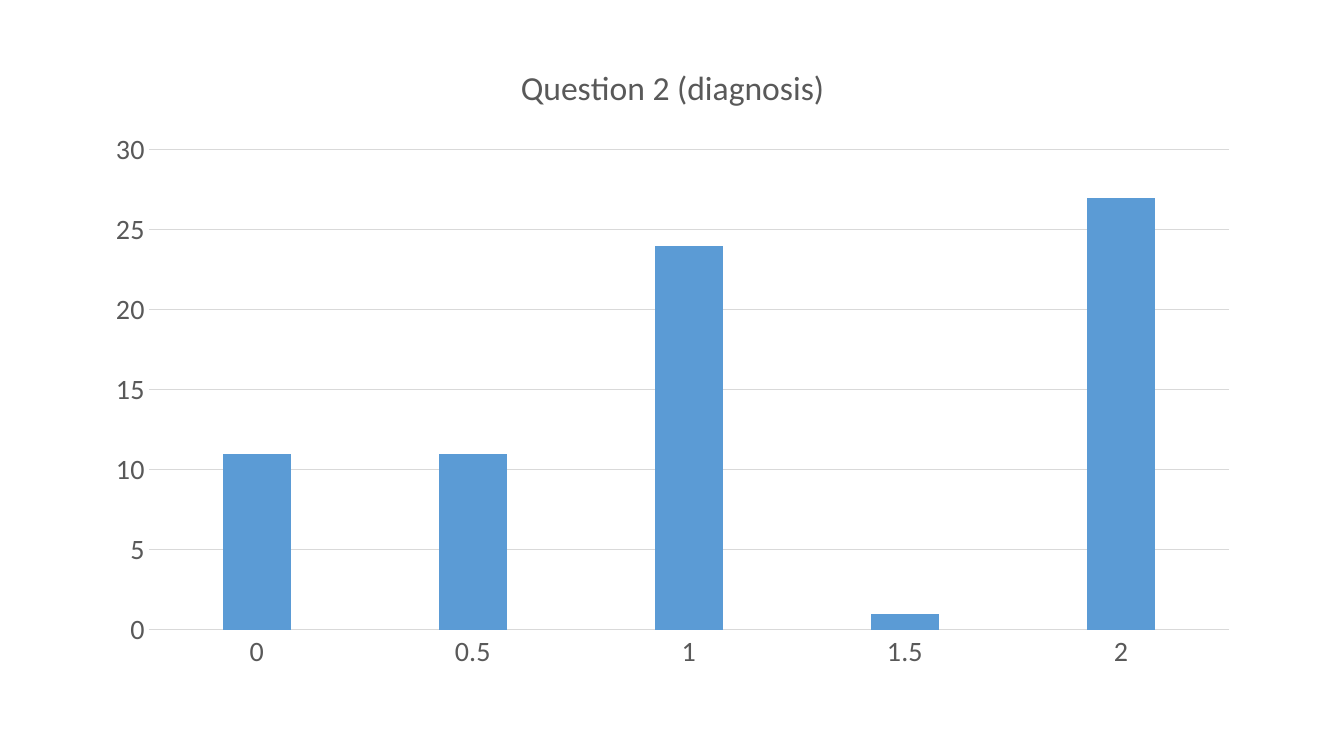
"""Build a slide with a column chart of the scores for question 2."""
import dataclasses

import pptx
import pptx.chart.data
import pptx.dml.color
import pptx.enum.chart
import pptx.util

QUESTION = "Question 2 (diagnosis)"
ANSWERS_BY_SCORE = {"0": 11, "0.5": 11, "1": 24, "1.5": 1, "2": 27}
SLIDE_SIZE = (13.33, 7.5)
CHART_BOX = (0.92, 0.4, 11.5, 6.36)


@dataclasses.dataclass(frozen=True)
class Theme:
    font: str = "Calibri"
    text: str = "595959"
    rule: str = "D9D9D9"
    column: str = "5B9BD5"
    title_size: int = 24
    label_size: int = 20
    rule_width: float = 0.75


THEME = Theme()


def color(value):
    return pptx.dml.color.RGBColor.from_string(value)


def style_font(font, size):
    font.name = THEME.font
    font.size = pptx.util.Pt(size)
    font.bold = False
    font.color.rgb = color(THEME.text)


def style_rule(line):
    line.color.rgb = color(THEME.rule)
    line.width = pptx.util.Pt(THEME.rule_width)


def write(frame, text, *, size):
    span = frame.paragraphs[0].add_run()
    span.text = text
    style_font(span.font, size)


def style_axis(axis):
    axis.major_tick_mark = pptx.enum.chart.XL_TICK_MARK.NONE
    axis.minor_tick_mark = pptx.enum.chart.XL_TICK_MARK.NONE
    style_font(axis.tick_labels.font, THEME.label_size)


def add_score_chart(page):
    scores = pptx.chart.data.CategoryChartData()
    scores.categories = list(ANSWERS_BY_SCORE)
    scores.add_series(QUESTION, list(ANSWERS_BY_SCORE.values()))
    chart = page.shapes.add_chart(
        pptx.enum.chart.XL_CHART_TYPE.COLUMN_CLUSTERED,
        *map(pptx.util.Inches, CHART_BOX),
        scores,
    ).chart
    style_font(chart.font, THEME.label_size)
    chart.has_legend = False
    chart.has_title = True
    chart.chart_title.include_in_layout = False
    write(chart.chart_title.text_frame, QUESTION, size=THEME.title_size)

    for axis in (chart.category_axis, chart.value_axis):
        style_axis(axis)
    style_rule(chart.category_axis.format.line)
    chart.value_axis.format.line.fill.background()
    chart.value_axis.has_major_gridlines = True
    style_rule(chart.value_axis.major_gridlines.format.line)
    chart.value_axis.minimum_scale = 0
    chart.value_axis.maximum_scale = 30
    chart.value_axis.major_unit = 5

    plot = chart.plots[0]
    plot.vary_by_categories = False
    plot.gap_width = 219
    plot.overlap = -27
    columns = plot.series[0].format.fill
    columns.solid()
    columns.fore_color.rgb = color(THEME.column)


def main():
    deck = pptx.Presentation()
    deck.slide_width, deck.slide_height = map(pptx.util.Inches, SLIDE_SIZE)
    page = deck.slides.add_slide(deck.slide_layouts.get_by_name("Blank"))
    add_score_chart(page)
    deck.save("out.pptx")


if __name__ == "__main__":
    main()
